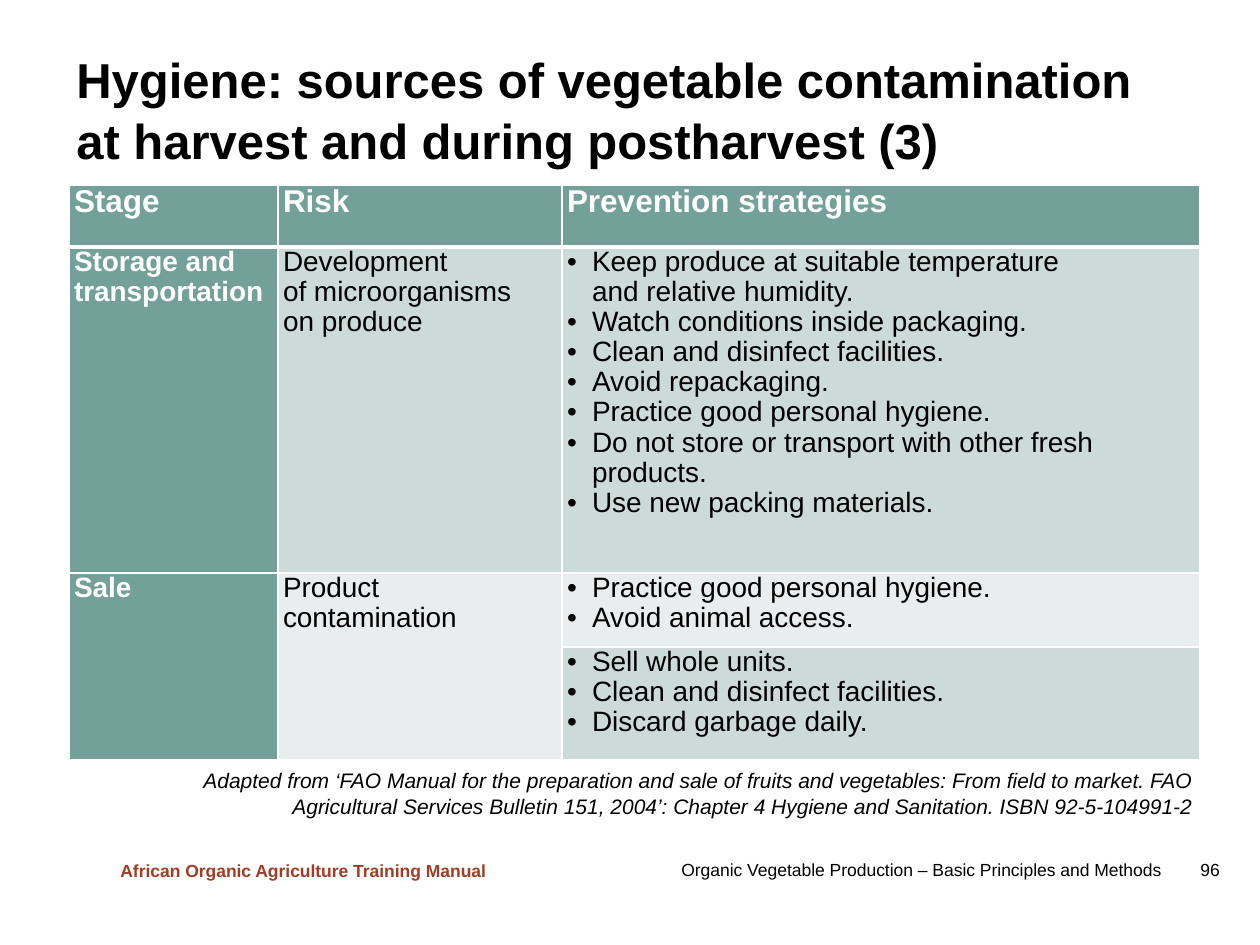
from dataclasses import dataclass

from lxml import etree
from pptx import Presentation
from pptx.dml.color import RGBColor
from pptx.enum.text import MSO_ANCHOR, PP_ALIGN
from pptx.oxml.ns import qn
from pptx.util import Emu, Pt

LEFT, RIGHT = PP_ALIGN.LEFT, PP_ALIGN.RIGHT
TOP, MIDDLE = MSO_ANCHOR.TOP, MSO_ANCHOR.MIDDLE
PX_PER_INCH = 126


def px(length):
    return Emu(round(length * 914400 / PX_PER_INCH))


@dataclass(frozen=True)
class Theme:
    font: str = "Arial"
    ink: str = "000000"
    white: str = "FFFFFF"
    brand: str = "A23D25"
    head: str = "73A098"
    band: str = "CCDAD8"
    pale: str = "E7EEED"
    title_size: int = 28
    head_size: int = 18
    body_size: int = 16
    source_size: int = 12
    footer_size: int = 10
    text_spacing: float = 1.05
    cell_spacing: float = 0.97
    rule: int = 1
    head_rule: int = 3


class SlideBuilder:
    def __init__(self, deck, theme):
        self.theme = theme
        self.page = deck.slides.add_slide(deck.slide_layouts[6])

    def style(self, paragraph, size, color, bold=False, italic=False):
        for span in paragraph.runs:
            font = span.font
            font.name, font.size = self.theme.font, Pt(size)
            font.bold, font.italic = bold, italic
            font.color.rgb = RGBColor.from_string(color)

    def text(self, frame, words, size, color=None, bold=False, italic=False,
             align=LEFT, anchor=TOP, wrap=True, tab=None):
        box = self.page.shapes.add_textbox(*map(px, frame))
        box.text_frame.word_wrap = wrap
        box.text_frame.vertical_anchor = anchor
        paragraph = box.text_frame.paragraphs[0]
        paragraph.text = words
        paragraph.alignment = align
        paragraph.line_spacing = self.theme.text_spacing
        if tab:
            stops = etree.SubElement(paragraph._p.get_or_add_pPr(), qn("a:tabLst"))
            etree.SubElement(stops, qn("a:tab"), pos=str(px(tab)), algn="l")
        self.style(paragraph, size, color or self.theme.ink, bold, italic)

    def border(self, cell, **widths):
        properties = cell._tc.get_or_add_tcPr()
        for index, side in enumerate(("L", "R", "T", "B")):
            width = widths.get(side, self.theme.rule)
            line = etree.Element(qn(f"a:ln{side}"), w=str(Pt(width)))
            fill = etree.SubElement(line, qn("a:solidFill"))
            etree.SubElement(fill, qn("a:srgbClr"), val=self.theme.white)
            properties.insert(index, line)

    def cell(self, cell, content, fill, size, color, bold):
        cell.margin_left = cell.margin_right = cell.margin_top = cell.margin_bottom = 0
        cell.fill.solid()
        cell.fill.fore_color.rgb = RGBColor.from_string(fill)
        bulleted = isinstance(content, list)
        frame = cell.text_frame
        for index, words in enumerate(content if bulleted else [content]):
            paragraph = frame.add_paragraph() if index else frame.paragraphs[0]
            paragraph.text = words
            paragraph.line_spacing = self.theme.cell_spacing
            properties = paragraph._p.get_or_add_pPr()
            properties.set("marL", str(px(30 if bulleted else 5)))
            properties.set("indent", str(px(-25 if bulleted else 0)))
            if bulleted:
                etree.SubElement(properties, qn("a:buFont"), typeface=self.theme.font)
                etree.SubElement(properties, qn("a:buChar"), char="•")
            self.style(paragraph, size, color, bold)

    def table(self, left, top, widths, heights, rows, fills, merges):
        theme = self.theme
        grid = self.page.shapes.add_table(
            len(heights), len(widths), px(left), px(top),
            px(sum(widths)), px(sum(heights))).table
        grid.horz_banding = False
        for column, width in zip(grid.columns, widths):
            column.width = px(width)
        for row, height in zip(grid.rows, heights):
            row.height = px(height)
        for y, (contents, band) in enumerate(zip(rows, fills)):
            for x, content in enumerate(contents):
                heading = y == 0 or x == 0
                self.cell(grid.cell(y, x), content,
                          theme.head if heading else band,
                          theme.body_size if y else theme.head_size,
                          theme.white if heading else theme.ink, heading)
                self.border(grid.cell(y, x),
                            T=theme.head_rule if y == 1 else theme.rule,
                            B=theme.head_rule if y == 0 else theme.rule)
        for first, last in merges:
            grid.cell(*first).merge(grid.cell(*last))


def main():
    deck = Presentation()
    deck.slide_width, deck.slide_height = px(1260), px(945)
    theme = Theme()
    slide = SlideBuilder(deck, theme)

    slide.text((669, 852, 580, 34),
               "Organic Vegetable Production – Basic Principles and Methods\t96",
               theme.footer_size, anchor=MIDDLE, tab=519)
    slide.text((108, 853, 396, 34), "African Organic Agriculture Training Manual",
               theme.footer_size, theme.brand, bold=True, wrap=False)

    rows = [
        ["Stage", "Risk", "Prevention strategies"],
        ["Storage and transportation",
         "Development\nof microorganisms\non produce",
         ["Keep produce at suitable temperature\nand relative humidity.",
          "Watch conditions inside packaging.",
          "Clean and disinfect facilities.",
          "Avoid repackaging.",
          "Practice good personal hygiene.",
          "Do not store or transport with other fresh products.",
          "Use new packing materials."]],
        ["Sale", "Product\ncontamination",
         ["Practice good personal hygiene.", "Avoid animal access."]],
        ["", "",
         ["Sell whole units.",
          "Clean and disinfect facilities.",
          "Discard garbage daily."]],
    ]
    slide.table(69, 185, (209, 284, 638), (62, 326, 74, 113), rows,
                (theme.head, theme.band, theme.pale, theme.band),
                [((2, x), (3, x)) for x in (0, 1)])

    slide.text((64, 40, 1142, 131),
               "Hygiene: sources of vegetable contamination\n"
               "at harvest and during postharvest (3)",
               theme.title_size, bold=True)
    slide.text((184, 760, 1022, 63),
               "Adapted from ‘FAO Manual for the preparation and sale of fruits and "
               "vegetables: From field to market. FAO Agricultural Services Bulletin "
               "151, 2004’: Chapter 4 Hygiene and Sanitation. ISBN 92-5-104991-2",
               theme.source_size, italic=True, align=RIGHT)
    deck.save("out.pptx")


if __name__ == "__main__":
    main()
